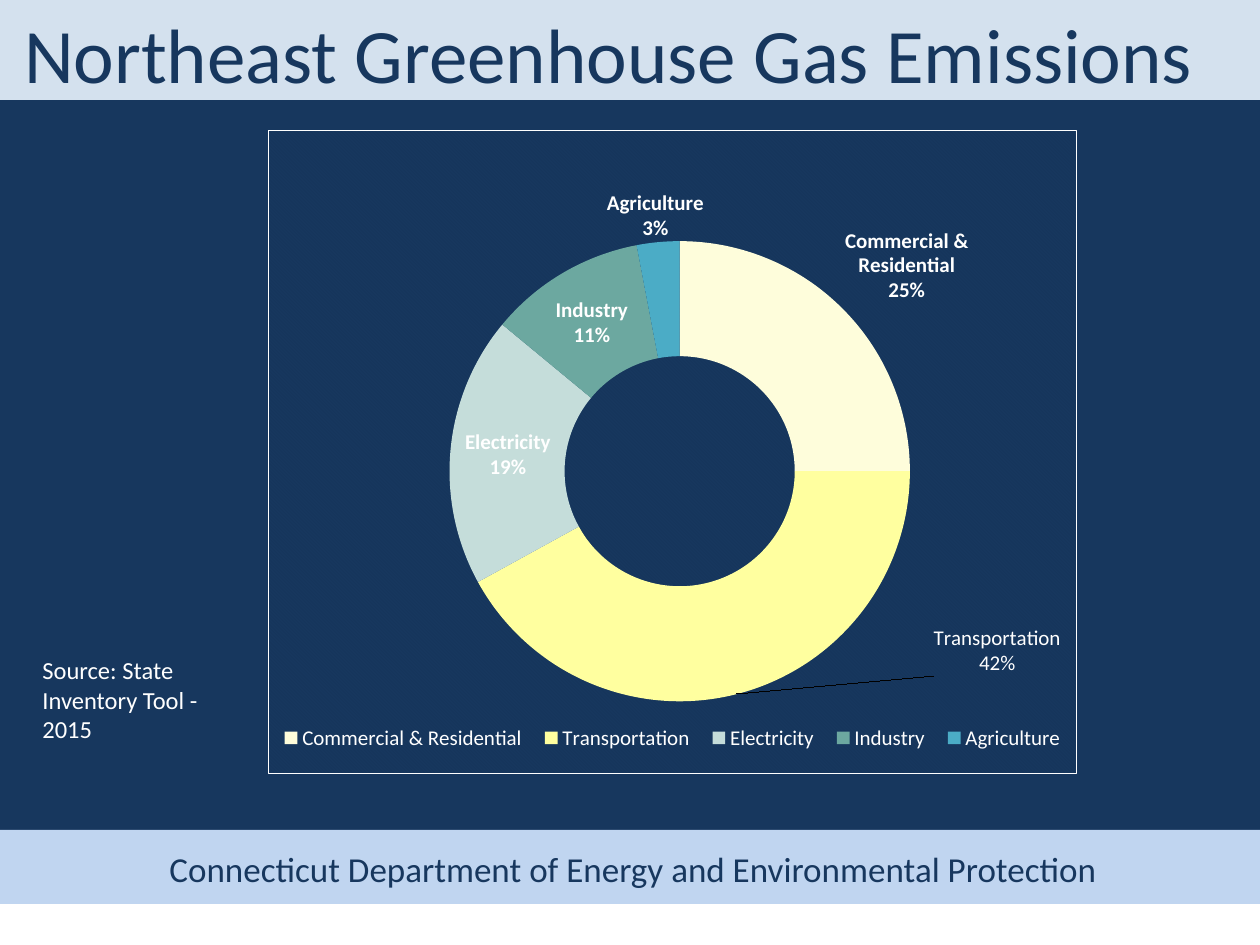
from copy import deepcopy

from lxml import etree
from pptx import Presentation
from pptx.chart.data import CategoryChartData
from pptx.dml.color import RGBColor
from pptx.enum.chart import XL_CHART_TYPE as CT, XL_LEGEND_POSITION as LP
from pptx.enum.shapes import MSO_SHAPE
from pptx.enum.text import PP_ALIGN
from pptx.oxml import parse_xml
from pptx.oxml.ns import nsdecls, qn
from pptx.util import Pt

PX = 914400 // 126
FONT = "Calibri"
COLORS = {"navy": "17375E", "pattern": "163459", "white": "FFFFFF",
          "header": "D4E1EE", "footer": "C0D5F0"}

# Content: left, top, width, height in px
BANDS = [
    ((0, 892, 1260, 53), "white"),
    ((0, 0, 1260, 100), "header"),
    ((0, 830, 1260, 74), "footer"),
]
TEXTS = [
    ((157, 841, 1085, 55), "Connecticut Department of Energy and Environmental Protection",
     20, "navy", PP_ALIGN.LEFT),
    ((0, 0, 1218, 100), "Northeast Greenhouse Gas Emissions", 44, "navy", PP_ALIGN.CENTER),
    ((30, 649, 228, 102), "Source: State Inventory Tool - 2015", 14, "white", PP_ALIGN.LEFT),
]
CHART_BOX = (268, 130, 809, 644)
SECTORS = [
    ("Commercial & Residential", 25, "FEFDDB"),
    ("Transportation", 42, "FFFF9F"),
    ("Electricity", 19, "C5DDDA"),
    ("Industry", 11, "6CA8A0"),
    ("Agriculture", 3, "4BACC6"),
]
# Sector index: label shift as a share of the chart, own text if any
MOVED_LABELS = {
    0: (0.13, -0.13, None),
    1: (0.34, 0.02, "Transportation\n42%"),
    4: (-0.01, -0.13, None),
}


def rgb(name):
    return RGBColor.from_string(COLORS.get(name, name))


def emu(box):
    return [v * PX for v in box]


def set_font(font, size, color, bold=False):
    font.name, font.size, font.bold = FONT, Pt(size), bold
    font.color.rgb = rgb(color)


def layout(x, y, w=None, h=None, inner=False):
    parts = '<c:layoutTarget val="inner"/>' if inner else ""
    if w is not None:
        parts += '<c:xMode val="edge"/><c:yMode val="edge"/>'
    for tag, value in zip("xywh", (x, y, w, h)):
        if value is not None:
            parts += f'<c:{tag} val="{value}"/>'
    return parse_xml(f'<c:layout {nsdecls("c")}><c:manualLayout>{parts}'
                     '</c:manualLayout></c:layout>')


def place(parent, new, after=None):
    """Put a layout in parent, as first child or after the named one."""
    for old in parent.findall(qn("c:layout")):
        parent.remove(old)
    if after is None:
        parent.insert(0, new)
    else:
        parent.find(qn(after)).addnext(new)


def show_name_and_percent(element):
    for tag, value in (("showVal", 0), ("showCatName", 1), ("showPercent", 1)):
        element.find(qn(f"c:{tag}")).set("val", str(value))
    separator = etree.Element(qn("c:separator"))
    separator.text = "\n"
    element.find(qn("c:showBubbleSize")).addnext(separator)


prs = Presentation()
prs.slide_width, prs.slide_height = 1260 * PX, 945 * PX
s = prs.slides.add_slide(prs.slide_layouts[6])
s.background.fill.solid()
s.background.fill.fore_color.rgb = rgb("navy")

# Bands
for box, color in BANDS:
    sp = s.shapes.add_shape(MSO_SHAPE.RECTANGLE, *emu(box))
    sp.shadow.inherit = False
    sp.fill.solid()
    sp.fill.fore_color.rgb = rgb(color)
    sp.line.fill.background()

# Title, footer and source
for box, text, size, color, align in TEXTS:
    tf = s.shapes.add_textbox(*emu(box)).text_frame
    tf.word_wrap = True
    tf.text = text
    p = tf.paragraphs[0]
    p.alignment = align
    set_font(p.runs[0].font, size, color)

# Doughnut chart
data = CategoryChartData()
data.categories = [name for name, _, _ in SECTORS]
data.add_series("Series 1", [value for _, value, _ in SECTORS])
chart = s.shapes.add_chart(CT.DOUGHNUT, *emu(CHART_BOX), data).chart
chart.has_title = False
set_font(chart.font, 10, "navy")
root = chart.element
root.find(qn("c:txPr")).addprevious(parse_xml(
    f'<c:spPr {nsdecls("c", "a")}><a:pattFill prst="dkDnDiag">'
    f'<a:fgClr><a:srgbClr val="{COLORS["pattern"]}"/></a:fgClr>'
    f'<a:bgClr><a:srgbClr val="{COLORS["navy"]}"/></a:bgClr></a:pattFill>'
    f'<a:ln w="{Pt(0.75)}"><a:solidFill><a:srgbClr val="{COLORS["white"]}"/>'
    '</a:solidFill></a:ln></c:spPr>'))
place(next(root.iter(qn("c:plotArea"))), layout(0.224, 0.128, 0.57, 0.804, inner=True))
next(root.iter(qn("c:holeSize"))).set("val", "70")

# Legend
chart.has_legend = True
legend = chart.legend
legend.position = LP.BOTTOM
legend.include_in_layout = False
set_font(legend.font, 12, "white")
place(next(root.iter(qn("c:legend"))), layout(0, 0.905, 1, 0.08), after="c:legendPos")

# Sector colours and labels
series = chart.plots[0].series[0]
for i, (_, _, color) in enumerate(SECTORS):
    fill = series.points[i].format.fill
    fill.solid()
    fill.fore_color.rgb = rgb(color)

labels = series.data_labels
labels.number_format, labels.number_format_is_linked = "0%", False
set_font(labels.font, 12, "white", bold=True)
dLbls = series._element.find(qn("c:dLbls"))
show_name_and_percent(dLbls)

for i, (dx, dy, text) in MOVED_LABELS.items():
    label = series.points[i].data_label
    if text:
        label.text_frame.text = text
        for p in label.text_frame.paragraphs:
            set_font(p.font, 12, "white")
            set_font(p.runs[0].font, 12, "white")
    else:
        set_font(label.font, 12, "white", bold=True)
for dLbl in dLbls.findall(qn("c:dLbl")):
    dx, dy, text = MOVED_LABELS[int(dLbl.find(qn("c:idx")).get("val"))]
    place(dLbl, layout(dx, dy), after="c:idx")
    show_name_and_percent(dLbl)
    if text:  # the leader line takes the colour of the label
        dLbl.find(qn("c:tx")).addnext(deepcopy(dLbls.find(qn("c:txPr"))))

prs.save("out.pptx")
